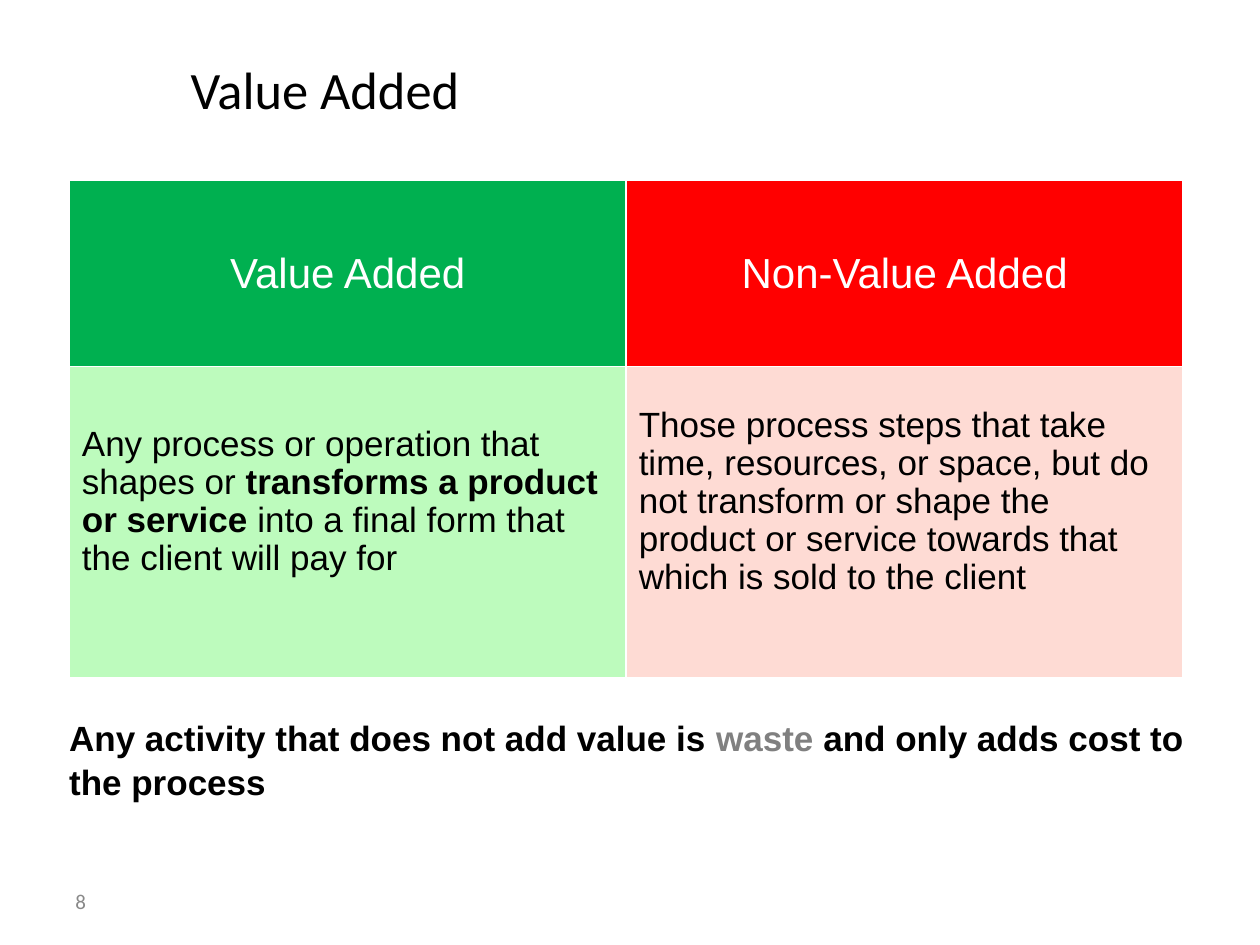
from dataclasses import dataclass

from lxml.etree import SubElement
from pptx import Presentation
from pptx.dml.color import RGBColor
from pptx.enum.text import MSO_ANCHOR as Anchor, PP_ALIGN as Align
from pptx.oxml.ns import qn
from pptx.util import Inches, Pt

WHITE = RGBColor(0xFF, 0xFF, 0xFF)
BLACK = RGBColor(0, 0, 0)
GREEN = RGBColor(0x00, 0xB0, 0x50)
RED = RGBColor(0xFF, 0, 0)
PALE_GREEN = RGBColor(0xBD, 0xFB, 0xBD)
PALE_RED = RGBColor(0xFE, 0xDB, 0xD4)
GRAY = RGBColor(0x80, 0x80, 0x80)
NUMBER_GRAY = RGBColor(0x89, 0x89, 0x89)


@dataclass
class Span:
    text: str
    size: int = 20
    color: RGBColor = BLACK
    bold: bool = False
    font: str = "Arial"


@dataclass
class Column:
    heading: str
    head_fill: RGBColor
    body: list[Span]
    body_fill: RGBColor


COLUMNS = [
    Column("Value Added", GREEN, [
        Span("Any process or operation that shapes or "),
        Span("transforms a product or service", bold=True),
        Span(" into a final form that the client will pay for"),
    ], PALE_GREEN),
    Column("Non-Value Added", RED, [
        Span("Those process steps that take time, resources, or space, but do not "
             "transform or shape the product or service towards that which is "
             "sold to the client"),
    ], PALE_RED),
]


def write(tf, spans: list[Span], align=Align.LEFT, spacing: float = 1.0) -> None:
    p = tf.paragraphs[0]
    p.alignment = align
    p.line_spacing = spacing
    for span in spans:
        r = p.add_run()
        r.text = span.text
        r.font.name = span.font
        r.font.size = Pt(span.size)
        r.font.bold = span.bold
        r.font.color.rgb = span.color


def add_text(s, box: tuple, spans: list[Span], anchor=Anchor.MIDDLE,
             align=Align.LEFT, spacing: float = 1.0) -> None:
    sp = s.shapes.add_textbox(*(Inches(v) for v in box))
    tf = sp.text_frame
    tf.word_wrap = True
    tf.vertical_anchor = anchor
    write(tf, spans, align, spacing)


def style_cell(cell, fill: RGBColor) -> None:
    cell.vertical_anchor = Anchor.MIDDLE
    tc_pr = cell._tc.get_or_add_tcPr()
    for side in ("a:lnL", "a:lnR", "a:lnT", "a:lnB"):
        ln = SubElement(tc_pr, qn(side), w=str(Pt(1)))
        solid = SubElement(ln, qn("a:solidFill"))
        SubElement(solid, qn("a:srgbClr"), val=str(WHITE))
    cell.fill.solid()
    cell.fill.fore_color.rgb = fill


def add_comparison(s, columns: list[Column]) -> None:
    frame = s.shapes.add_table(2, len(columns), Inches(0.55), Inches(1.43),
                               Inches(8.84), Inches(3.95))
    table = frame.table
    for row, height in zip(table.rows, (1.48, 2.47)):
        row.height = Inches(height)
    for i, column in enumerate(columns):
        head, body = table.cell(0, i), table.cell(1, i)
        style_cell(head, column.head_fill)
        style_cell(body, column.body_fill)
        body.margin_bottom = Inches(0.37)
        write(head.text_frame, [Span(column.heading, 24, WHITE)], Align.CENTER)
        write(body.text_frame, column.body, spacing=0.97)


def main() -> None:
    prs = Presentation()
    prs.slide_width, prs.slide_height = Inches(10), Inches(7.5)
    s = prs.slides.add_slide(prs.slide_layouts[6])
    add_text(s, (0.58, 0.08, 4, 1.25),
             [Span("Value Added", 30, font="Calibri")], align=Align.CENTER)
    add_comparison(s, COLUMNS)
    add_text(s, (0.45, 5.62, 9.25, 0.77), [
        Span("Any activity that does not add value is ", bold=True),
        Span("waste", color=GRAY, bold=True),
        Span(" and only adds cost to the process", bold=True),
    ], anchor=Anchor.TOP, spacing=1.05)
    add_text(s, (0.5, 6.95, 2.33, 0.4),
             [Span("8", 12, NUMBER_GRAY, font="Calibri")])
    prs.save("out.pptx")


if __name__ == "__main__":
    main()
